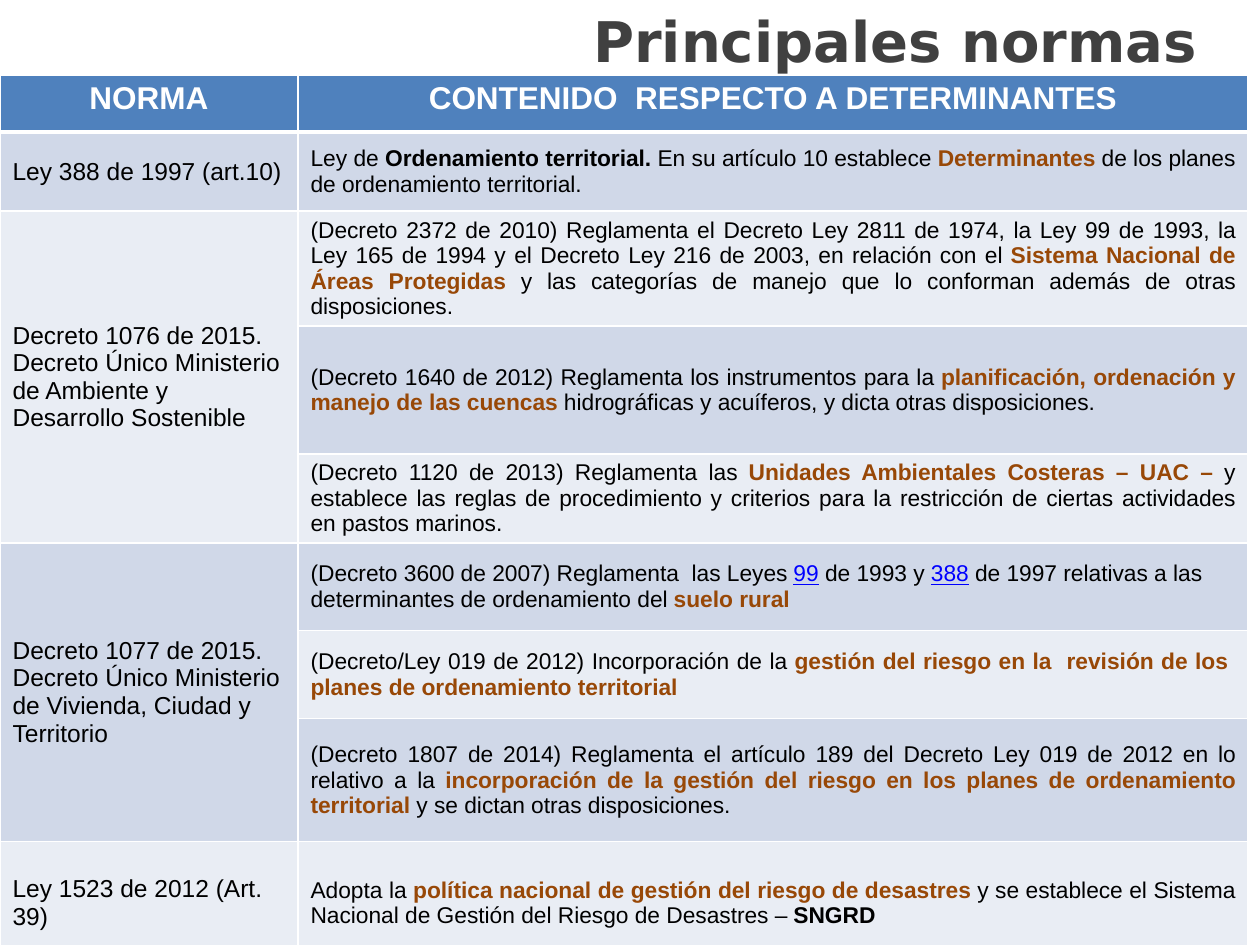
import lxml.etree
import pptx
import pptx.dml.color
import pptx.enum.text
import pptx.oxml.ns
import pptx.util

PX_PER_INCH = 126
COLORS = {
    "title": "404040",
    "header": "4F81BD",
    "dark_band": "D0D8E8",
    "light_band": "E9EDF4",
    "white": "FFFFFF",
    "text": "000000",
    "accent": "984807",
    "link": "0000FF",
}
STYLES = {
    "plain": {},
    "bold": {"bold": True},
    "accent": {"color": "accent", "bold": True},
    "link": {"color": "link", "underline": True},
}
ALIGN = pptx.enum.text.PP_ALIGN
ANCHOR = pptx.enum.text.MSO_ANCHOR

COLUMN_WIDTHS = [298, 950]
ROW_HEIGHTS = [57, 79, 115, 128, 88, 88, 88, 123, 123]
HEADINGS = ["NORMA", "CONTENIDO  RESPECTO A DETERMINANTES"]

# Each rule: its name and the contents it covers, one table row per content.
RULES = [
    ("Ley 388 de 1997 (art.10)", [
        [("Ley de ", "plain"), ("Ordenamiento territorial. ", "bold"),
         ("En su artículo 10 establece ", "plain"), ("Determinantes ", "accent"),
         ("de los planes de ordenamiento territorial.", "plain")],
    ]),
    ("Decreto 1076 de 2015. Decreto Único Ministerio de Ambiente y Desarrollo Sostenible", [
        [("(Decreto 2372 de 2010) Reglamenta el Decreto Ley 2811 de 1974, la Ley 99 de 1993, "
          "la Ley 165 de 1994 y el Decreto Ley 216 de 2003, en relación con el ", "plain"),
         ("Sistema Nacional de Áreas Protegidas ", "accent"),
         ("y las categorías de manejo que lo conforman además de otras disposiciones.", "plain")],
        [("(Decreto 1640 de 2012) Reglamenta los instrumentos para la ", "plain"),
         ("planificación, ordenación y manejo de las cuencas ", "accent"),
         ("hidrográficas y acuíferos, y dicta otras disposiciones.", "plain")],
        [("(Decreto 1120 de 2013) Reglamenta las ", "plain"),
         ("Unidades Ambientales Costeras – UAC – ", "accent"),
         ("y establece las reglas de procedimiento y criterios para la restricción de "
          "ciertas actividades en pastos marinos.", "plain")],
    ]),
    ("Decreto 1077 de 2015. Decreto Único Ministerio de Vivienda, Ciudad y Territorio", [
        [("(Decreto 3600 de 2007) Reglamenta  las Leyes ", "plain"), ("99", "link"),
         (" de 1993 y ", "plain"), ("388", "link"),
         (" de 1997 relativas a las determinantes de ordenamiento del ", "plain"),
         ("suelo rural", "accent")],
        [("(Decreto/Ley 019 de 2012) Incorporación de la ", "plain"),
         ("gestión del riesgo en la  revisión de los  planes de ordenamiento territorial",
          "accent")],
        [("(Decreto 1807 de 2014) Reglamenta el artículo 189 del Decreto Ley 019 de 2012 "
          "en lo relativo a la ", "plain"),
         ("incorporación de la gestión del riesgo en los planes de ordenamiento territorial ",
          "accent"),
         ("y se dictan otras disposiciones.", "plain")],
    ]),
    ("Ley 1523 de 2012 (Art. 39)", [
        [("Adopta la ", "plain"),
         ("política nacional de gestión del riesgo de desastres ", "accent"),
         ("y se establece el Sistema Nacional de Gestión del Riesgo de Desastres – ", "plain"),
         ("SNGRD", "bold")],
    ]),
]


def px(length):
    return pptx.util.Emu(round(length * 914400 / PX_PER_INCH))


def rgb(name):
    return pptx.dml.color.RGBColor.from_string(COLORS[name])


def add_text(paragraph, text, size=13, font="Arial", color="text", bold=False, underline=False):
    run = paragraph.add_run()
    run.text = text
    run.font.size = pptx.util.Pt(size)
    run.font.name = font
    run.font.color.rgb = rgb(color)
    run.font.bold = bold
    run.font.underline = underline


def set_border(cell, side, points):
    """Draw one white edge; side is L, R, T or B, in that order."""
    properties = cell._tc.get_or_add_tcPr()
    qn = pptx.oxml.ns.qn
    line = lxml.etree.SubElement(properties, qn(f"a:ln{side}"), w=str(points * 12700))
    fill = lxml.etree.SubElement(line, qn("a:solidFill"))
    lxml.etree.SubElement(fill, qn("a:srgbClr"), val=COLORS["white"])


def format_cell(cell, row):
    widths = {"L": 1, "R": 1, "T": 3 if row == 1 else 1, "B": 3 if row == 0 else 1}
    for side, points in widths.items():
        set_border(cell, side, points)
    band = "dark_band" if row % 2 else "light_band"
    cell.fill.solid()
    cell.fill.fore_color.rgb = rgb("header" if row == 0 else band)
    cell.vertical_anchor = ANCHOR.TOP if row == 0 else ANCHOR.MIDDLE


def add_rules_table(slide):
    frame = slide.shapes.add_table(len(ROW_HEIGHTS), len(COLUMN_WIDTHS), 0, px(75),
                                   px(sum(COLUMN_WIDTHS)), px(sum(ROW_HEIGHTS)))
    table = frame.table
    for column, width in zip(table.columns, COLUMN_WIDTHS):
        column.width = px(width)
    for index, height in enumerate(ROW_HEIGHTS):
        table.rows[index].height = px(height)
        for cell in table.rows[index].cells:
            format_cell(cell, index)

    for index, heading in enumerate(HEADINGS):
        paragraph = table.cell(0, index).text_frame.paragraphs[0]
        paragraph.alignment = ALIGN.CENTER
        add_text(paragraph, heading, size=18, color="white", bold=True)

    row = 1
    for name, contents in RULES:
        name_cell = table.cell(row, 0)
        if len(contents) > 1:
            name_cell.merge(table.cell(row + len(contents) - 1, 0))
        add_text(name_cell.text_frame.paragraphs[0], name, size=14)
        for runs in contents:
            paragraph = table.cell(row, 1).text_frame.paragraphs[0]
            has_links = any(style == "link" for _, style in runs)
            paragraph.alignment = ALIGN.LEFT if has_links else ALIGN.JUSTIFY
            for text, style in runs:
                add_text(paragraph, text, **STYLES[style])
            row += 1


def add_title(slide, text):
    box = slide.shapes.add_textbox(px(581), 0, px(632), px(81))
    box.text_frame.word_wrap = False
    box.text_frame.auto_size = pptx.enum.text.MSO_AUTO_SIZE.SHAPE_TO_FIT_TEXT
    add_text(box.text_frame.paragraphs[0], text, size=32, font="DejaVu Sans",
             color="title", bold=True)


def main():
    presentation = pptx.Presentation()
    presentation.slide_width = pptx.util.Inches(10)
    presentation.slide_height = pptx.util.Inches(7.5)
    slide = presentation.slides.add_slide(presentation.slide_layouts[6])
    add_rules_table(slide)
    add_title(slide, "Principales normas")
    presentation.save("out.pptx")


if __name__ == "__main__":
    main()
